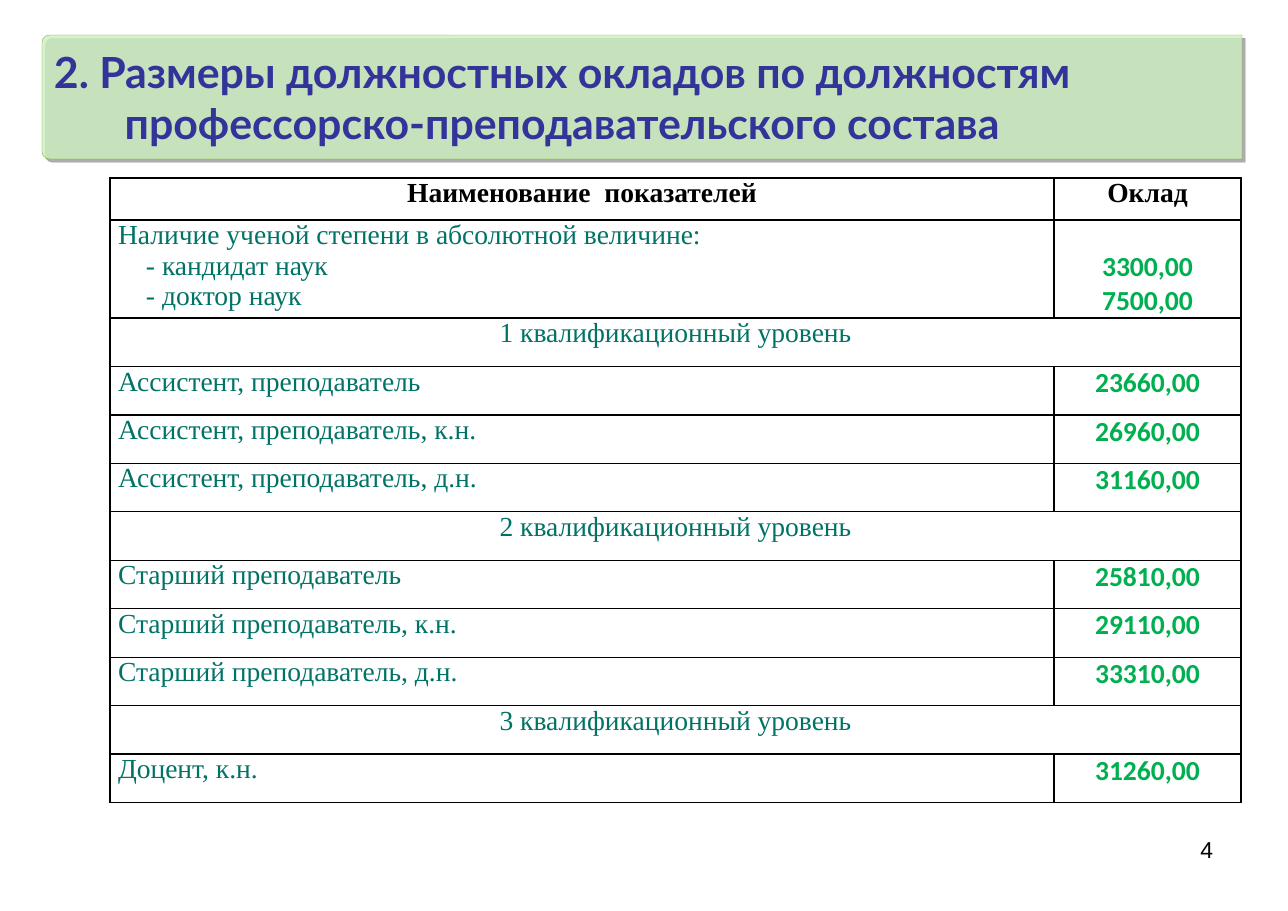
"""Build a slide with the salary table of the teaching staff."""
from dataclasses import dataclass

from pptx import Presentation
from pptx.dml.color import RGBColor
from pptx.enum.shapes import MSO_SHAPE
from pptx.enum.text import MSO_ANCHOR, MSO_AUTO_SIZE, PP_ALIGN
from pptx.oxml import parse_xml
from pptx.oxml.ns import nsdecls, qn
from pptx.util import Pt

LEFT_ROUNDED = MSO_SHAPE.ROUND_2_SAME_RECTANGLE
TOP, MIDDLE, BOTTOM = MSO_ANCHOR.TOP, MSO_ANCHOR.MIDDLE, MSO_ANCHOR.BOTTOM
CENTER, RIGHT, JUSTIFY = PP_ALIGN.CENTER, PP_ALIGN.RIGHT, PP_ALIGN.JUSTIFY
NO_AUTOFIT = MSO_AUTO_SIZE.NONE

TITLE = "2. Размеры должностных окладов по должностям профессорско-преподавательского состава"
HEADINGS = ("Наименование  показателей", "Оклад")
DEGREES = (
    "Наличие ученой степени в абсолютной величине:",
    [("- кандидат наук", "3300,00"), ("- доктор наук", "7500,00")],
)
LEVELS = [
    ("1 квалификационный уровень", [
        ("Ассистент, преподаватель", "23660,00"),
        ("Ассистент, преподаватель, к.н.", "26960,00"),
        ("Ассистент, преподаватель, д.н.", "31160,00"),
    ]),
    ("2 квалификационный уровень", [
        ("Старший преподаватель", "25810,00"),
        ("Старший преподаватель, к.н.", "29110,00"),
        ("Старший преподаватель, д.н.", "33310,00"),
    ]),
    ("3 квалификационный уровень", [("Доцент, к.н.", "31260,00")]),
]
PAGE_NUMBER = "4"

EMU_PER_PX = 8298
SLIDE_SIZE = (1288, 911)
BANNER = (42, 35, 1200, 124)
TITLE_BOX = (42, 35, 1040, 124)
NUMBER_BOX = (924, 830, 300, 63)
TABLE_BOX = (110, 178, 1131, 625)
SALARY_WIDTH = 187
HEADING_HEIGHT, DEGREES_HEIGHT = 42, 98
CELL_INSET, DEGREE_INDENT = 8, 28


@dataclass(frozen=True)
class TextStyle:
    font: str
    size: int
    color: str
    bold: bool = False


@dataclass(frozen=True)
class Theme:
    title = TextStyle("Lato", 28, "333399", True)
    heading = TextStyle("Times New Roman", 18, "000000", True)
    position = TextStyle("Times New Roman", 18, "007366")
    salary = TextStyle("Calibri", 18, "00B050", True)
    number = TextStyle("Arial", 15, "000000")
    banner = "CDF0C2"
    banner_line = "78B012"
    black = "000000"


def px(length):
    return round(length * EMU_PER_PX)


def write(frame, lines, style, align):
    frame.text = "\n".join(lines)
    for paragraph in frame.paragraphs:
        paragraph.alignment = align
        font = paragraph.font
        font.name, font.size, font.bold = style.font, Pt(style.size), style.bold
        font.color.rgb = RGBColor.from_string(style.color)


def fill_cell(cell, lines, style, align, anchor=TOP):
    cell.margin_left = cell.margin_right = px(CELL_INSET)
    cell.margin_top = cell.margin_bottom = 0
    cell.vertical_anchor = anchor
    write(cell.text_frame, lines, style, align)


def draw_grid(cell):
    properties = cell._tc.get_or_add_tcPr()
    for side in ("lnL", "lnR", "lnT", "lnB"):
        properties.append(parse_xml(
            f'<a:{side} {nsdecls("a")} w="{Pt(1)}"><a:solidFill>'
            f'<a:srgbClr val="{Theme.black}"/></a:solidFill></a:{side}>'))
    cell.fill.background()


def add_banner(slide):
    left, top, width, height = BANNER
    offset = (width - height) / 2
    banner = slide.shapes.add_shape(
        LEFT_ROUNDED, px(left + offset), px(top - offset), px(height), px(width))
    banner.rotation = 270
    banner.adjustments[0] = 0.06
    banner.fill.solid()
    banner.fill.fore_color.rgb = RGBColor.from_string(Theme.banner)
    properties = banner._element.spPr
    properties.find(".//" + qn("a:srgbClr")).append(
        parse_xml(f'<a:alpha {nsdecls("a")} val="80000"/>'))
    banner.line.color.rgb = RGBColor.from_string(Theme.banner_line)
    banner.line.width = Pt(0.25)
    banner.shadow.inherit = False
    properties.find(qn("a:effectLst")).append(parse_xml(
        f'<a:outerShdw {nsdecls("a")} dist="{Pt(3)}" dir="2700000" rotWithShape="0">'
        f'<a:srgbClr val="{Theme.black}"><a:alpha val="40000"/></a:srgbClr></a:outerShdw>'))
    slide.shapes._spTree.insert(2, banner._element)


def add_title(slide):
    title = slide.shapes.title
    title.left, title.top, title.width, title.height = map(px, TITLE_BOX)
    frame = title.text_frame
    frame.margin_left = frame.margin_right = frame.margin_top = frame.margin_bottom = 0
    frame.word_wrap, frame.auto_size = True, NO_AUTOFIT
    frame.vertical_anchor = MIDDLE
    write(frame, [TITLE], Theme.title, CENTER)


def add_salary_table(slide):
    level_rows = sum(1 + len(positions) for _, positions in LEVELS)
    table = slide.shapes.add_table(2 + level_rows, 2, *map(px, TABLE_BOX)).table
    table.first_row = table.horz_banding = False
    table.columns[0].width = px(TABLE_BOX[2] - SALARY_WIDTH)
    table.columns[1].width = px(SALARY_WIDTH)
    row_height = (TABLE_BOX[3] - HEADING_HEIGHT - DEGREES_HEIGHT) / level_rows
    heights = [HEADING_HEIGHT, DEGREES_HEIGHT] + [row_height] * level_rows
    for row, height in zip(table.rows, heights):
        row.height = px(height)
    for cell in table.iter_cells():
        draw_grid(cell)

    for column, heading in enumerate(HEADINGS):
        fill_cell(table.cell(0, column), [heading], Theme.heading, CENTER)

    intro, degrees = DEGREES
    names, supplements = zip(*degrees)
    degree_cell = table.cell(1, 0)
    fill_cell(degree_cell, [intro, *names], Theme.position, JUSTIFY)
    for paragraph in degree_cell.text_frame.paragraphs[1:]:
        paragraph._p.get_or_add_pPr().set("marL", str(px(DEGREE_INDENT)))
    fill_cell(table.cell(1, 1), supplements, Theme.salary, CENTER, BOTTOM)

    row = 2
    for level, positions in LEVELS:
        table.cell(row, 0).merge(table.cell(row, 1))
        fill_cell(table.cell(row, 0), [level], Theme.position, CENTER)
        for row, (position, salary) in enumerate(positions, row + 1):
            fill_cell(table.cell(row, 0), [position], Theme.position, JUSTIFY)
            fill_cell(table.cell(row, 1), [salary], Theme.salary, CENTER)
        row += 1


def add_page_number(slide):
    frame = slide.shapes.add_textbox(*map(px, NUMBER_BOX)).text_frame
    frame.word_wrap = True
    write(frame, [PAGE_NUMBER], Theme.number, RIGHT)


def main():
    deck = Presentation()
    deck.slide_width, deck.slide_height = map(px, SLIDE_SIZE)
    slide = deck.slides.add_slide(deck.slide_layouts.get_by_name("Title Only"))
    add_banner(slide)
    add_title(slide)
    add_salary_table(slide)
    add_page_number(slide)
    deck.save("out.pptx")


if __name__ == "__main__":
    main()
